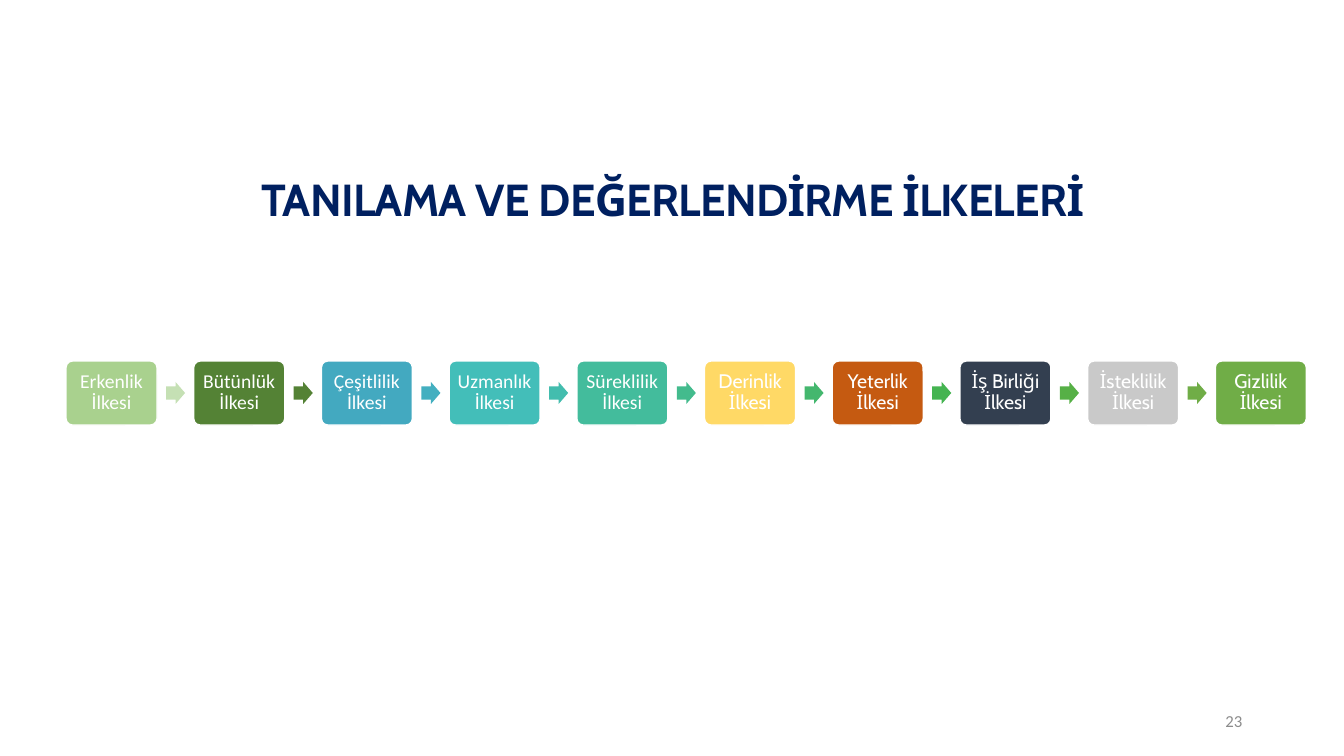
from pptx import Presentation
from pptx import util as u
from pptx.dml.color import RGBColor
from pptx.enum import shapes, text

PX = 914400 / 100.8
FIRST_LEFT, LAST_LEFT = 66, 1215
BOX_TOP, BOX_W, BOX_H = 361, 91, 64
ARROW_OFFSET, ARROW_TOP, ARROW_W, ARROW_H = 100, 382, 19, 22

# label, font, box colour, colour of the arrow that follows
PRINCIPLES = [
    ("Erkenlik İlkesi", "Calibri", "A9D18E", "C5E0B4"),
    ("Bütünlük İlkesi", "Calibri", "548235", "548235"),
    ("Çeşitlilik İlkesi", "Calibri", "43A9C0", "43AFC0"),
    ("Uzmanlık İlkesi", "Calibri", "43BEB9", "43BDAE"),
    ("Süreklilik İlkesi", "Calibri", "43BC9C", "43BB8D"),
    ("Derinlik İlkesi", "Cabin", "FFD966", "44B76E"),
    ("Yeterlik İlkesi", "Cabin", "C55A11", "45B451"),
    ("İş Birliği İlkesi", "Cabin", "333F50", "56B046"),
    ("İsteklilik İlkesi", "Cabin", "C9C9C9", "70AD47"),
    ("Gizlilik İlkesi", "Cabin", "70AD47", None),
]


def px(n):
    return u.Emu(round(n * PX))


def rgb(value):
    return RGBColor.from_string(value)


def write(sp, content, size, font, color, align, spacing=1.0, bold=False):
    """Fill a shape with one vertically centred paragraph and return its run."""
    tf = sp.text_frame
    tf.word_wrap = True
    tf.auto_size = text.MSO_AUTO_SIZE.NONE
    tf.vertical_anchor = text.MSO_ANCHOR.MIDDLE
    p = tf.paragraphs[0]
    p.alignment = align
    p.line_spacing = spacing
    r = p.add_run()
    r.text = content
    r.font.size = u.Pt(size)
    r.font.name = font
    r.font.bold = bold
    r.font.color.rgb = rgb(color)
    return r


def add_title(s, content):
    sp = s.shapes.title
    sp.left, sp.top, sp.width, sp.height = px(93), px(169), px(1159), px(65)
    r = write(sp, content, 32, "Cabin", "002060", text.PP_ALIGN.CENTER, 0.9, True)
    r.font._element.set("spc", "-50")


def add_filled(s, kind, left, top, width, height, fill):
    sp = s.shapes.add_shape(kind, px(left), px(top), px(width), px(height))
    sp.shadow.inherit = False
    sp.fill.solid()
    sp.fill.fore_color.rgb = rgb(fill)
    return sp


def add_box(s, left, label, font, fill):
    sp = add_filled(s, shapes.MSO_SHAPE.ROUNDED_RECTANGLE,
                    left, BOX_TOP, BOX_W, BOX_H, fill)
    sp.adjustments[0] = 0.1
    sp.line.color.rgb = rgb("FFFFFF")
    sp.line.width = u.Pt(1)
    tf = sp.text_frame
    tf.margin_left = tf.margin_right = tf.margin_top = tf.margin_bottom = px(5)
    write(sp, label, 14, font, "FFFFFF", text.PP_ALIGN.CENTER, 0.9)


def add_arrow(s, left, fill):
    sp = add_filled(s, shapes.MSO_SHAPE.RIGHT_ARROW,
                    left, ARROW_TOP, ARROW_W, ARROW_H, fill)
    sp.adjustments[0] = 0.6
    sp.adjustments[1] = 0.5
    sp.line.fill.background()


def add_page_number(s, number):
    sp = s.shapes.add_textbox(px(950), px(701), px(302), px(40))
    write(sp, number, 12, "Calibri", "8C8C8C", text.PP_ALIGN.RIGHT)


def main():
    prs = Presentation()
    prs.slide_width, prs.slide_height = u.Inches(13.33), u.Inches(7.5)
    s = prs.slides.add_slide(prs.slide_layouts[5])
    add_title(s, "TANILAMA VE DEĞERLENDİRME İLKELERİ")
    step = (LAST_LEFT - FIRST_LEFT) / (len(PRINCIPLES) - 1)
    for i, (label, font, fill, arrow_fill) in enumerate(PRINCIPLES):
        left = FIRST_LEFT + i * step
        add_box(s, left, label, font, fill)
        if arrow_fill:
            add_arrow(s, left + ARROW_OFFSET, arrow_fill)
    add_page_number(s, "23")
    prs.save("out.pptx")


if __name__ == "__main__":
    main()
